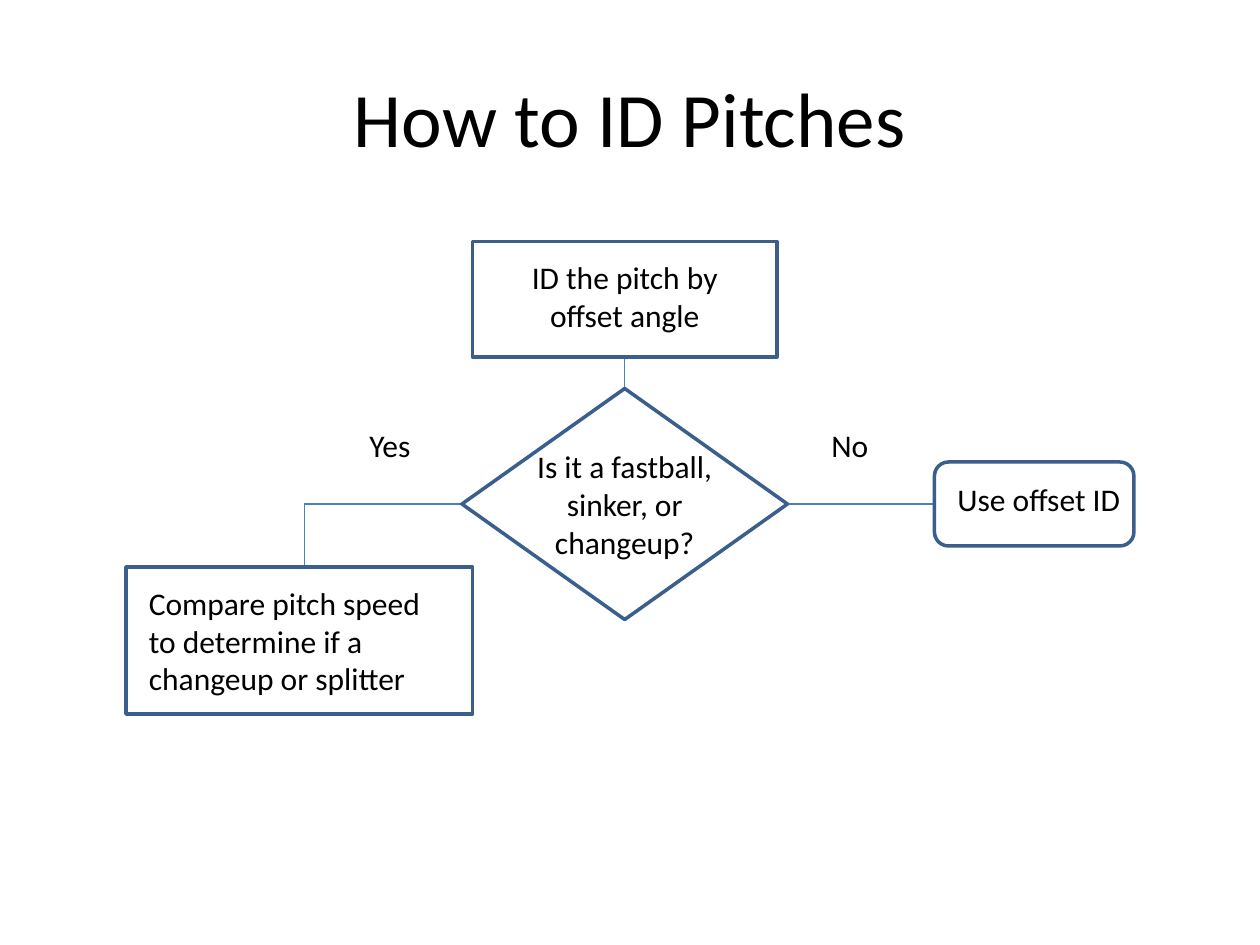
import pptx
import pptx.util
import pptx.dml.color
import pptx.enum.shapes
import pptx.enum.text
import pptx.oxml.ns
import lxml.etree

Pt = pptx.util.Pt
SHAPE = pptx.enum.shapes.MSO_SHAPE
ALIGN = pptx.enum.text.PP_ALIGN
ANCHOR = pptx.enum.text.MSO_ANCHOR
COLORS = {"text": "000000", "outline": "3A5F8C", "connector": "4B7EBC"}


def color(name):
    return pptx.dml.color.RGBColor.from_string(COLORS[name])


def write(frame, text, size, align):
    frame.word_wrap = True
    para = frame.paragraphs[0]
    para.alignment = align
    span = para.add_run()
    span.text = text
    span.font.name = "Calibri"
    span.font.size = Pt(size)
    span.font.color.rgb = color("text")


deck = pptx.Presentation()
deck.slide_width = Pt(720)
deck.slide_height = Pt(540)
page = deck.slides.add_slide(deck.slide_layouts[5])

title = page.shapes.title
title.left, title.top, title.width, title.height = Pt(36), Pt(21.6), Pt(648), Pt(90)
title.text_frame.vertical_anchor = ANCHOR.MIDDLE
write(title.text_frame, "How to ID Pitches", 44, ALIGN.CENTER)

connectors = [
    (357, 204, 357, 222),
    (174, 288, 174, 324),
    (264, 288, 174, 288),
    (450, 288, 534, 288),
]
for x1, y1, x2, y2 in connectors:
    connector = page.shapes.add_connector(
        pptx.enum.shapes.MSO_CONNECTOR.STRAIGHT, Pt(x1), Pt(y1), Pt(x2), Pt(y2)
    )
    connector.line.color.rgb = color("connector")
    connector.line.width = Pt(0.75)
    properties = connector._element.spPr
    lxml.etree.SubElement(properties, pptx.oxml.ns.qn("a:effectLst"))

nodes = [
    (SHAPE.FLOWCHART_DECISION, 264, 222, 186, 132),
    (SHAPE.FLOWCHART_PROCESS, 270, 138, 174, 66),
    (SHAPE.FLOWCHART_ALTERNATE_PROCESS, 534, 264, 114, 48),
    (SHAPE.FLOWCHART_PROCESS, 72, 324, 198, 84),
]
for kind, left, top, width, height in nodes:
    node = page.shapes.add_shape(kind, Pt(left), Pt(top), Pt(width), Pt(height))
    node.shadow.inherit = False
    node.fill.background()
    node.line.color.rgb = color("outline")
    node.line.width = Pt(2)

labels = [
    ("ID the pitch by offset angle", 276, 144, 162, 51, ALIGN.CENTER),
    ("Is it a fastball, sinker, or changeup?", 288, 252, 138, 72.7, ALIGN.CENTER),
    ("Yes", 204, 240, 54, 30, ALIGN.LEFT),
    ("No", 468, 240, 54, 29, ALIGN.LEFT),
    ("Use offset ID", 540, 271, 126, 29, ALIGN.LEFT),
    ("Compare pitch speed to determine if a changeup or splitter",
     78, 330, 186, 72.7, ALIGN.LEFT),
]
for text, left, top, width, height, align in labels:
    box = page.shapes.add_textbox(Pt(left), Pt(top), Pt(width), Pt(height))
    box.text_frame.auto_size = pptx.enum.text.MSO_AUTO_SIZE.SHAPE_TO_FIT_TEXT
    write(box.text_frame, text, 18, align)

deck.save("out.pptx")
